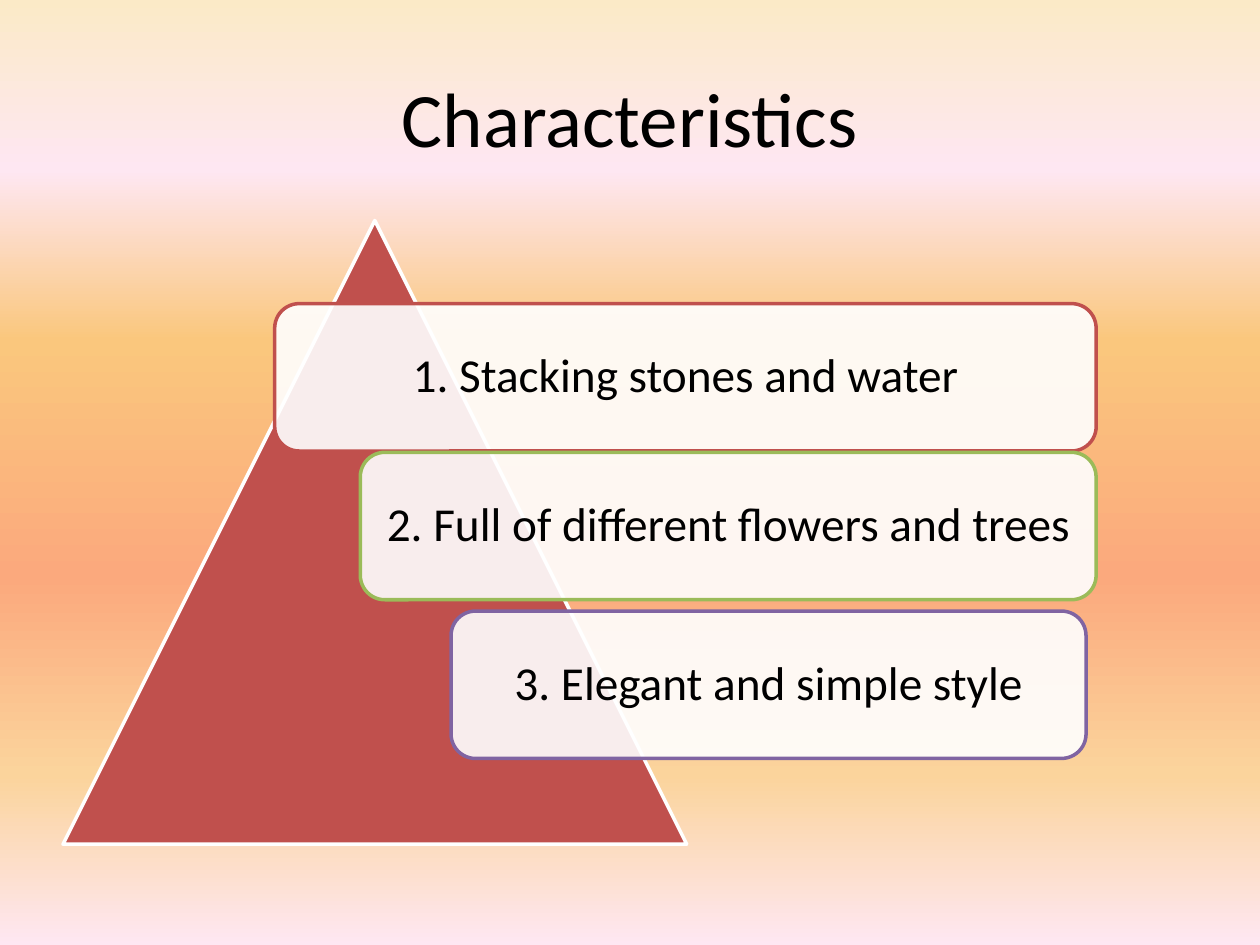
from dataclasses import dataclass

from lxml import etree
from pptx import Presentation
from pptx.dml.color import RGBColor
from pptx.enum import shapes, text
from pptx.oxml.ns import qn
from pptx.util import Inches, Pt


@dataclass(frozen=True)
class Theme:
    font: str = "Calibri"
    ink: str = "000000"
    white: str = "FFFFFF"
    red: str = "C0504D"
    green: str = "9BBB59"
    violet: str = "8064A2"
    head: int = 44
    body: int = 27
    edge: int = 2
    sky: tuple = ((0, "FBEAC7"), (18, "FEE7F2"), (36, "FAC77D"),
                  (61, "FBA97D"), (82, "FBD49C"), (100, "FEE7F2"))


THEME = Theme()
CARD_H = 1.17
CARDS = (
    ("1. Stacking stones and water", 2.18, 2.41, 6.52, THEME.red),
    ("2. Full of different flowers and trees", 2.86, 3.59, 5.84, THEME.green),
    ("3. Elegant and simple style", 3.58, 4.85, 5.04, THEME.violet),
)


def assign(item, values):
    for name, value in values.items():
        setattr(item, name, value)


def paint(slide):
    """Fill the background with the theme's gradient, top to bottom."""
    fill = slide.background.fill
    fill.gradient()
    fill.gradient_angle = 270
    stops = slide.element.find(".//" + qn("a:gsLst"))
    for old in list(stops):
        stops.remove(old)
    for place, color in THEME.sky:
        stop = etree.SubElement(stops, qn("a:gs"), pos=str(place * 1000))
        etree.SubElement(stop, qn("a:srgbClr"), val=color)


def write(shape, words, size, inset, line=1.0):
    frame = shape.text_frame
    frame.text = words
    assign(frame, {"word_wrap": True, "auto_size": text.MSO_AUTO_SIZE.NONE,
                   "vertical_anchor": text.MSO_ANCHOR.MIDDLE})
    sides = ("left", "top", "right", "bottom")
    assign(frame, {f"margin_{side}": Inches(inset) for side in sides})
    para = frame.paragraphs[0]
    assign(para, {"alignment": text.PP_ALIGN.CENTER, "line_spacing": line})
    font = para.runs[0].font
    assign(font, {"name": THEME.font, "size": Pt(size)})
    font.color.rgb = RGBColor.from_string(THEME.ink)


def title(slide, words):
    shape = slide.shapes.title
    assign(shape, {"left": Inches(0.5), "top": Inches(0.3),
                   "width": Inches(9), "height": Inches(1.25)})
    write(shape, words, THEME.head, 0.05)


def block(slide, kind, box, fill, edge):
    shape = slide.shapes.add_shape(kind, *map(Inches, box))
    shape.shadow.inherit = False
    shape.fill.solid()
    shape.fill.fore_color.rgb = RGBColor.from_string(fill)
    shape.line.color.rgb = RGBColor.from_string(edge)
    shape.line.width = Pt(THEME.edge)
    return shape


def card(slide, words, left, top, width, edge):
    """Add a rounded, slightly see-through label."""
    shape = block(slide, shapes.MSO_SHAPE.ROUNDED_RECTANGLE,
                  (left, top, width, CARD_H), THEME.white, edge)
    color = shape.element.spPr.find(qn("a:solidFill")).find(qn("a:srgbClr"))
    etree.SubElement(color, qn("a:alpha"), val="90000")
    write(shape, words, THEME.body, 0.11, 0.9)


def main():
    deck = Presentation()
    assign(deck, {"slide_width": Inches(10), "slide_height": Inches(7.5)})
    slide = deck.slides.add_slide(deck.slide_layouts[5])
    paint(slide)
    title(slide, "Characteristics")
    block(slide, shapes.MSO_SHAPE.ISOSCELES_TRIANGLE,
          (0.5, 1.75, 4.95, 4.95), THEME.red, THEME.white)
    for item in CARDS:
        card(slide, *item)
    deck.save("out.pptx")


if __name__ == "__main__":
    main()
